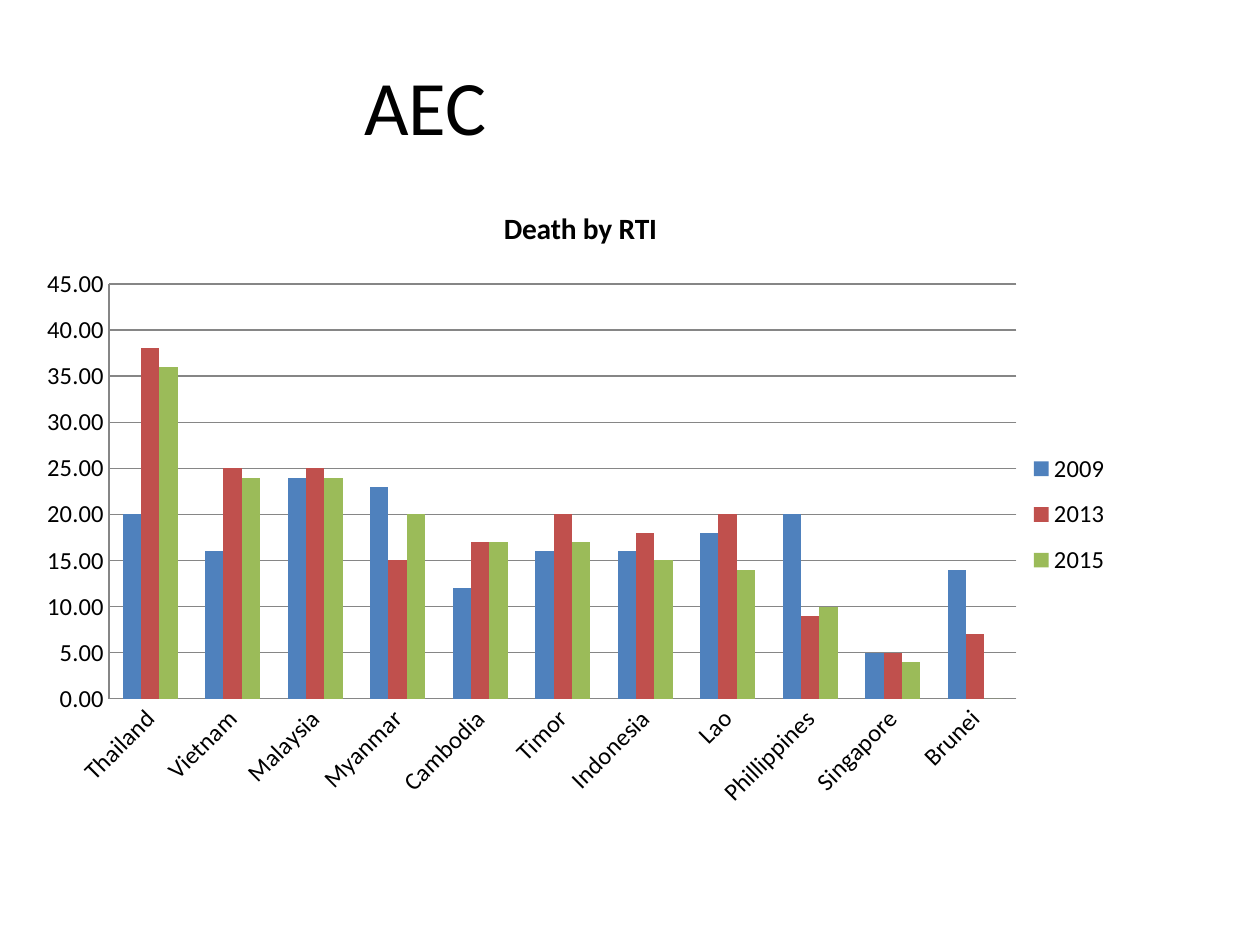
from lxml.etree import SubElement
from pptx import Presentation
from pptx.chart.data import CategoryChartData
from pptx.dml.color import RGBColor
from pptx.enum.chart import XL_CHART_TYPE, XL_LEGEND_POSITION, XL_TICK_MARK
from pptx.enum.text import MSO_ANCHOR, PP_ALIGN
from pptx.oxml.ns import qn
from pptx.util import Cm, Pt

# Content
HEADING = " AEC"
CHART_HEADING = "Death by RTI"
YEARS = [("2009", "4F81BD"), ("2013", "C0504D"), ("2015", "9BBB59")]
DEATH_RATES = [
    ("Thailand", 20, 38, 36),
    ("Vietnam", 16, 25, 24),
    ("Malaysia", 24, 25, 24),
    ("Myanmar", 23, 15, 20),
    ("Cambodia", 12, 17, 17),
    ("Timor", 16, 20, 17),
    ("Indonesia", 16, 18, 15),
    ("Lao", 18, 20, 14),
    ("Phillippines", 20, 9, 10),
    ("Singapore", 5, 5, 4),
    ("Brunei", 14, 7, 0),
]

# Formats
HEADING_FONT = {"name": "Calibri", "size": Pt(44), "bold": False}
CHART_FONT = {"name": "Calibri", "size": Pt(14)}
CHART_HEADING_FONT = {"name": "Calibri", "size": Pt(16.8), "bold": True}
VALUE_SCALE = {"minimum_scale": 0, "maximum_scale": 45, "major_unit": 5,
               "has_major_gridlines": True}
LEGEND_LAYOUT = {"xMode": "edge", "yMode": "edge",
                 "x": 0.89, "y": 0.4, "w": 0.1, "h": 0.24}
LEFT, TOP = Cm(0.5), Cm(0.53)
HEADING_WIDTH, HEADING_HEIGHT = Cm(15.8), Cm(3.17)
CHART_WIDTH, CHART_HEIGHT = Cm(22.4), Cm(12.83)


def apply(target, values):
    for attribute, value in values.items():
        setattr(target, attribute, value)


def paint(color, hex_code):
    color.rgb = RGBColor.from_string(hex_code)


def style_font(font, values):
    apply(font, values)
    paint(font.color, "000000")


def style_line(line):
    line.width = Pt(0.75)
    paint(line.color, "868686")


def place_legend(legend, values):
    """Set the legend's place as fractions of the chart."""
    root = legend._element
    for old in root.findall(qn("c:layout")):
        root.remove(old)
    layout = SubElement(root, qn("c:layout"))
    root.find(qn("c:legendPos")).addnext(layout)
    manual = SubElement(layout, qn("c:manualLayout"))
    for tag, value in values.items():
        SubElement(manual, qn(f"c:{tag}")).set("val", str(value))


presentation = Presentation()
apply(presentation, {"slide_width": Cm(25.4), "slide_height": Cm(19.05)})
slide = presentation.slides.add_slide(presentation.slide_layouts[5])

# Heading
heading = slide.shapes.title
apply(heading, {"left": LEFT, "top": TOP,
                "width": HEADING_WIDTH, "height": HEADING_HEIGHT})
heading.text_frame.text = HEADING
heading.text_frame.vertical_anchor = MSO_ANCHOR.MIDDLE
heading_line = heading.text_frame.paragraphs[0]
heading_line.alignment = PP_ALIGN.CENTER
style_font(heading_line.runs[0].font, HEADING_FONT)

# Chart data: one series a year
countries, *yearly_rates = zip(*DEATH_RATES)
rates = CategoryChartData(number_format="0.00")
rates.categories = countries
for (year, _), values in zip(YEARS, yearly_rates):
    rates.add_series(year, values)

chart = slide.shapes.add_chart(
    XL_CHART_TYPE.COLUMN_CLUSTERED, LEFT, TOP + HEADING_HEIGHT,
    CHART_WIDTH, CHART_HEIGHT, rates).chart
style_font(chart.font, CHART_FONT)

# Chart heading and legend
chart.has_title = True
chart.chart_title.include_in_layout = False
chart.chart_title.text_frame.text = CHART_HEADING
style_font(chart.chart_title.text_frame.paragraphs[0].runs[0].font,
           CHART_HEADING_FONT)
chart.has_legend = True
apply(chart.legend, {"position": XL_LEGEND_POSITION.RIGHT,
                     "include_in_layout": False})
place_legend(chart.legend, LEGEND_LAYOUT)

# Columns
columns = chart.plots[0]
apply(columns, {"gap_width": 150, "overlap": 0, "vary_by_categories": False})
for (_, hex_code), series in zip(YEARS, columns.series):
    series.format.fill.solid()
    paint(series.format.fill.fore_color, hex_code)

# Axes
for axis in (chart.category_axis, chart.value_axis):
    apply(axis, {"major_tick_mark": XL_TICK_MARK.NONE,
                 "minor_tick_mark": XL_TICK_MARK.NONE})
    style_line(axis.format.line)
apply(chart.value_axis, VALUE_SCALE)
apply(chart.value_axis.tick_labels, {"number_format": "0.00",
                                     "number_format_is_linked": False})
style_line(chart.value_axis.major_gridlines.format.line)

presentation.save("out.pptx")
